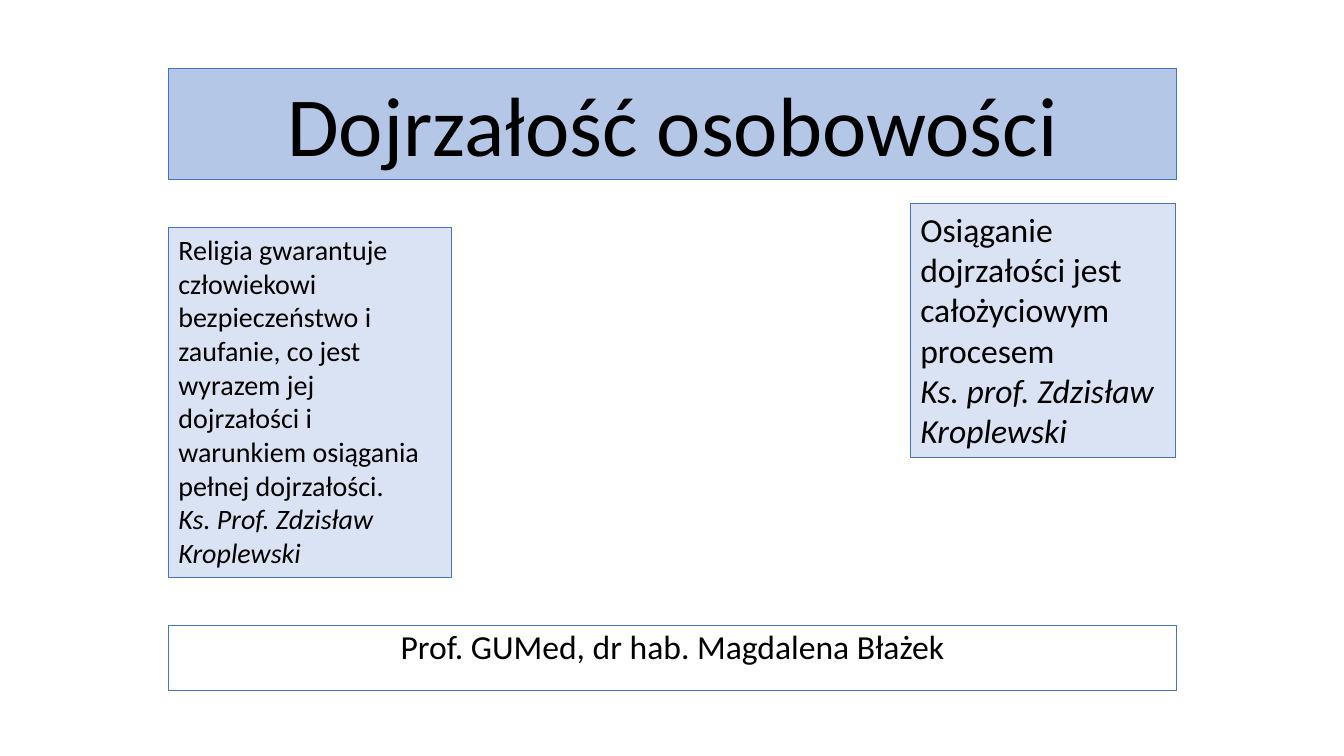
from dataclasses import dataclass

from pptx import Presentation
from pptx.dml.color import RGBColor
from pptx.enum.text import MSO_ANCHOR, MSO_AUTO_SIZE, PP_ALIGN
from pptx.shapes.base import BaseShape
from pptx.util import Emu, Pt

PX = 9144  # 100 px to the inch
FONT = "Calibri"
BLACK = RGBColor(0x00, 0x00, 0x00)
BLUE = RGBColor(0x44, 0x72, 0xC4)
SKY = RGBColor(0xB4, 0xC7, 0xE7)
PALE = RGBColor(0xDA, 0xE3, 0xF3)
LEFT, CENTER = PP_ALIGN.LEFT, PP_ALIGN.CENTER
TOP, BOTTOM = MSO_ANCHOR.TOP, MSO_ANCHOR.BOTTOM
FIXED, GROW = MSO_AUTO_SIZE.NONE, MSO_AUTO_SIZE.SHAPE_TO_FIT_TEXT


@dataclass
class Quote:
    box: tuple[int, int, int, int]
    text: str
    author: str
    size: int


QUOTES = [
    Quote((903, 202, 263, 252),
          "Osiąganie dojrzałości jest całożyciowym procesem",
          "Ks. prof. Zdzisław Kroplewski", 24),
    Quote((167, 226, 281, 347),
          "Religia gwarantuje człowiekowi bezpieczeństwo i zaufanie, co jest "
          "wyrazem jej dojrzałości i warunkiem osiągania pełnej dojrzałości.",
          "Ks. Prof. Zdzisław Kroplewski", 20),
]


def place(shape: BaseShape, box: tuple[int, int, int, int],
          fill: RGBColor | None = None) -> None:
    """Set the position, outline and fill of a box."""
    shape.left, shape.top, shape.width, shape.height = (
        Emu(side * PX) for side in box)
    shape.line.color.rgb = BLUE
    shape.line.width = Pt(0.75)
    if fill is None:
        shape.fill.background()
    else:
        shape.fill.solid()
        shape.fill.fore_color.rgb = fill


def write(shape: BaseShape, *lines: str, size: int, align: PP_ALIGN = LEFT,
          anchor: MSO_ANCHOR = TOP, fit: MSO_AUTO_SIZE = FIXED,
          lead: float = 1.0, before: int = 0) -> None:
    """Write one paragraph per line; those after the first are italic."""
    frame = shape.text_frame
    frame.word_wrap = True
    frame.auto_size = fit
    frame.vertical_anchor = anchor
    for i, line in enumerate(lines):
        para = frame.add_paragraph() if i else frame.paragraphs[0]
        para.alignment = align
        para.line_spacing = lead
        para.space_before = Pt(before)
        run = para.add_run()
        run.text = line
        font = run.font
        font.name, font.size, font.italic = FONT, Pt(size), i > 0
        font.color.rgb = BLACK


def main() -> None:
    deck = Presentation()
    deck.slide_width, deck.slide_height = Emu(1333 * PX), Emu(750 * PX)
    slide = deck.slides.add_slide(deck.slide_layouts[5])
    shapes = slide.shapes

    # Title
    place(shapes.title, (167, 68, 1000, 110), SKY)
    write(shapes.title, "Dojrzałość osobowości", size=60, align=CENTER,
          anchor=BOTTOM, lead=0.9)

    # Speaker
    name = shapes.add_textbox(0, 0, 0, 0)
    place(name, (167, 621, 1000, 64))
    write(name, "Prof. GUMed, dr hab. Magdalena Błażek", size=24,
          align=CENTER, lead=0.9, before=10)

    # Quotes
    for quote in QUOTES:
        card = shapes.add_textbox(0, 0, 0, 0)
        place(card, quote.box, PALE)
        write(card, quote.text, quote.author, size=quote.size, fit=GROW)

    deck.save("out.pptx")


if __name__ == "__main__":
    main()
